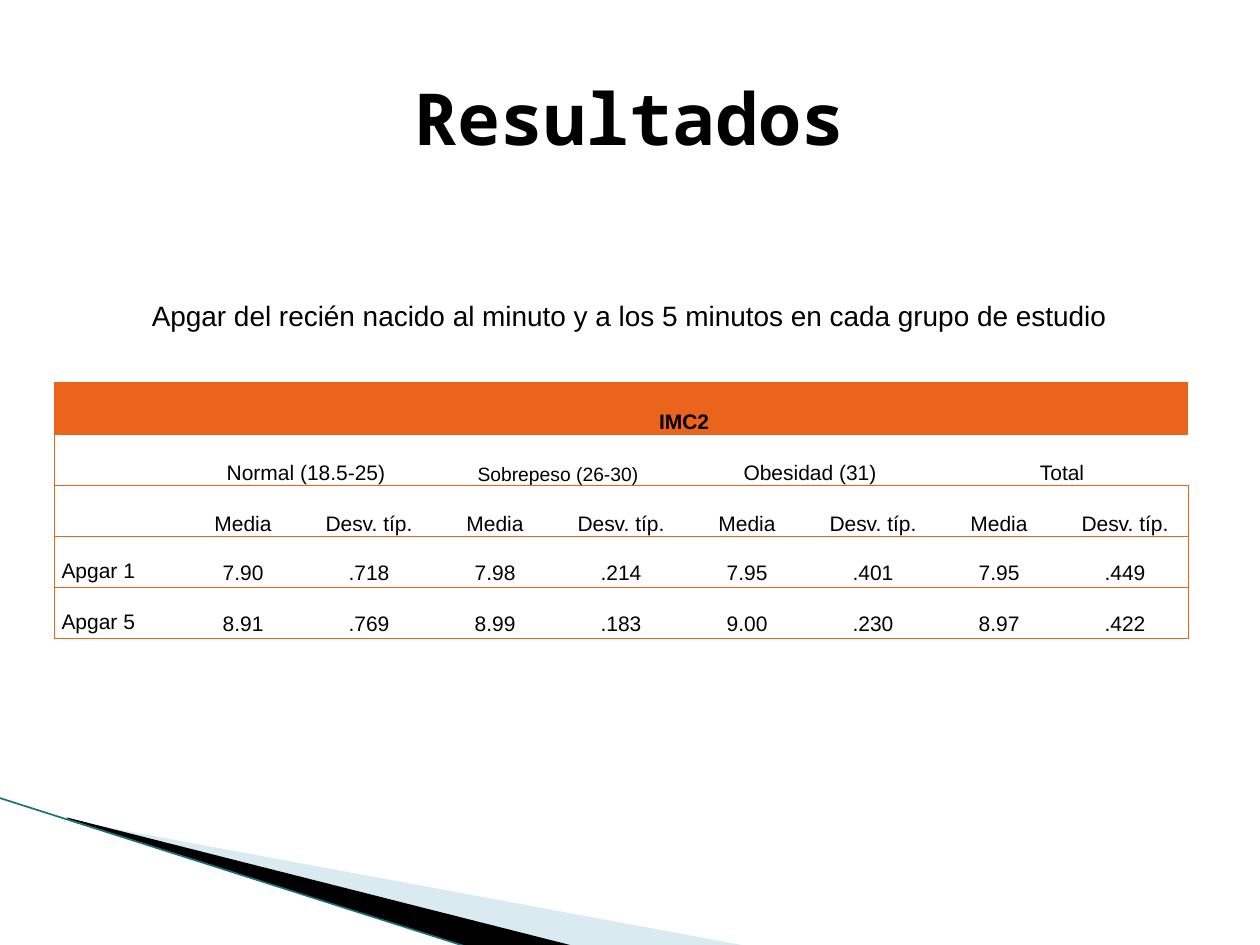
from dataclasses import dataclass

from lxml import etree
from pptx import Presentation
from pptx import util as u
from pptx.dml.color import RGBColor
from pptx.enum import shapes, text
from pptx.oxml import ns

Cm, Pt = u.Cm, u.Pt


@dataclass(frozen=True)
class Theme:
    ink: str = "000000"
    accent: str = "EB641B"
    paper: str = "FFFFFF"
    pale: str = "A0CBDC"
    teal: str = "1B6F80"
    body_font: str = "Arial"
    title_font: str = "Noto Sans Mono"
    title: int = 41
    caption: int = 16
    cell: int = 12
    small: int = 11


THEME = Theme()
MIDDLE, BOTTOM, TOP = (text.MSO_ANCHOR.MIDDLE, text.MSO_ANCHOR.BOTTOM,
                       text.MSO_ANCHOR.TOP)
CENTER, LEFT = text.PP_ALIGN.CENTER, text.PP_ALIGN.LEFT

GROUPS = ["Normal (18.5-25)", "Sobrepeso (26-30)", "Obesidad (31)", "Total"]
MEASURES = ["Media", "Desv. típ."]
SCORES = [
    ["Apgar 1", "7.90", ".718", "7.98", ".214", "7.95", ".401", "7.95", ".449"],
    ["Apgar 5", "8.91", ".769", "8.99", ".183", "9.00", ".230", "8.97", ".422"],
]


def apply(target, **values):
    for name, value in values.items():
        setattr(target, name, value)


def write(para, words, size, font=THEME.body_font, bold=False, align=CENTER):
    para.alignment = align
    span = para.add_run()
    span.text = words
    apply(span.font, size=Pt(size), name=font, bold=bold)
    span.font.color.rgb = RGBColor.from_string(THEME.ink)


def add_text(page, box, words, wrap, **style):
    frame = page.shapes.add_textbox(*map(Cm, box)).text_frame
    apply(frame, word_wrap=wrap, vertical_anchor=MIDDLE)
    write(frame.paragraphs[0], words, **style)


def add_ribbon(page, box, points, color, alpha=None):
    left, top = box[:2]
    corners = [(Cm(left + x), Cm(top + y)) for x, y in points]
    builder = page.shapes.build_freeform(*corners[0], scale=1.0)
    builder.add_line_segments(corners[1:], close=True)
    ribbon = builder.convert_to_shape()
    ribbon.shadow.inherit = False
    ribbon.fill.solid()
    ribbon.fill.fore_color.rgb = RGBColor.from_string(color)
    ribbon.line.fill.background()
    if alpha is not None:
        tint = ribbon._element.spPr.find(".//" + ns.qn("a:srgbClr"))
        etree.SubElement(tint, ns.qn("a:alpha"), val=str(alpha * 1000))


def add_corner(page, box):
    """Ribbons that sweep out of the bottom left corner."""
    left, top, width, height = box
    add_ribbon(page, box, [(1.4, 0.46), (width, 3), (11.58, 3), (1.4, 0.43)],
               THEME.pale, alpha=40)
    add_ribbon(page, box, [(1.35, 0.4), (11.61, 3), (9.45, height), (1.37, 0.43)],
               THEME.ink)
    edge = page.shapes.add_connector(
        shapes.MSO_CONNECTOR.STRAIGHT, Cm(left - 0.03), Cm(top),
        Cm(left + 9.45), Cm(top + height))
    edge.line.width = Pt(0.95)
    edge.line.color.rgb = RGBColor.from_string(THEME.teal)
    etree.SubElement(edge._element.spPr, ns.qn("a:effectLst"))


def set_borders(cell, visible):
    props = cell._tc.get_or_add_tcPr()
    for place, side in enumerate("LRTB"):
        line = etree.Element(ns.qn("a:ln" + side), w=str(Pt(0.75)))
        if side in visible:
            fill = etree.SubElement(line, ns.qn("a:solidFill"))
            etree.SubElement(fill, ns.qn("a:srgbClr"), val=THEME.accent)
        else:
            etree.SubElement(line, ns.qn("a:noFill"))
        props.insert(place, line)


def add_scores(page, box):
    """Apgar table: heading, groups, measures, then one row per score."""
    rows = [
        ["", "IMC2"] + [""] * 7,
        [""] + [words for group in GROUPS for words in (group, "")],
        [""] + MEASURES * len(GROUPS),
        *SCORES,
    ]
    count = len(rows[0])
    table = page.shapes.add_table(len(rows), count, *map(Cm, box)).table
    apply(table, first_row=False, horz_banding=False)

    for r, row in enumerate(rows):
        for c, words in enumerate(row):
            cell = table.cell(r, c)
            label = c == 0
            anchor = BOTTOM if r < 3 else TOP if label else MIDDLE
            apply(cell, margin_left=Cm(0.15), margin_right=Cm(0.15),
                  margin_top=0, margin_bottom=0, vertical_anchor=anchor)
            cell.fill.solid()
            cell.fill.fore_color.rgb = RGBColor.from_string(
                THEME.accent if r == 0 else THEME.paper)
            set_borders(cell, "TB" + "L" * label + "R" * (c == count - 1))
            para = cell.text_frame.paragraphs[0]
            if words:
                para.line_spacing = 2.0
                write(para, words, THEME.small if words == GROUPS[1] else THEME.cell,
                      bold=r == 0, align=LEFT if label else CENTER)
            else:
                para.font.size = Pt(THEME.cell)

    # Spanning headings
    table.cell(0, 1).merge(table.cell(0, count - 1))
    set_borders(table.cell(0, 1), "TBR")
    for c in range(1, count, 2):
        table.cell(1, c).merge(table.cell(1, c + 1))


def main():
    deck = Presentation()
    apply(deck, slide_width=Cm(25.4), slide_height=Cm(19.05))
    page = deck.slides.add_slide(deck.slide_layouts[6])

    add_corner(page, (0, 16.08, 15.11, 3.02))
    add_scores(page, (1.09, 7.72, 22.86, 5.15))
    add_text(page, (1.27, 0.76, 22.86, 3.18), "Resultados", True,
             size=THEME.title, font=THEME.title_font, bold=True)
    add_text(page, (2.69, 5.89, 19.99, 0.94),
             "Apgar del recién nacido al minuto y a los 5 minutos "
             "en cada grupo de estudio", False, size=THEME.caption)

    deck.save("out.pptx")


if __name__ == "__main__":
    main()
